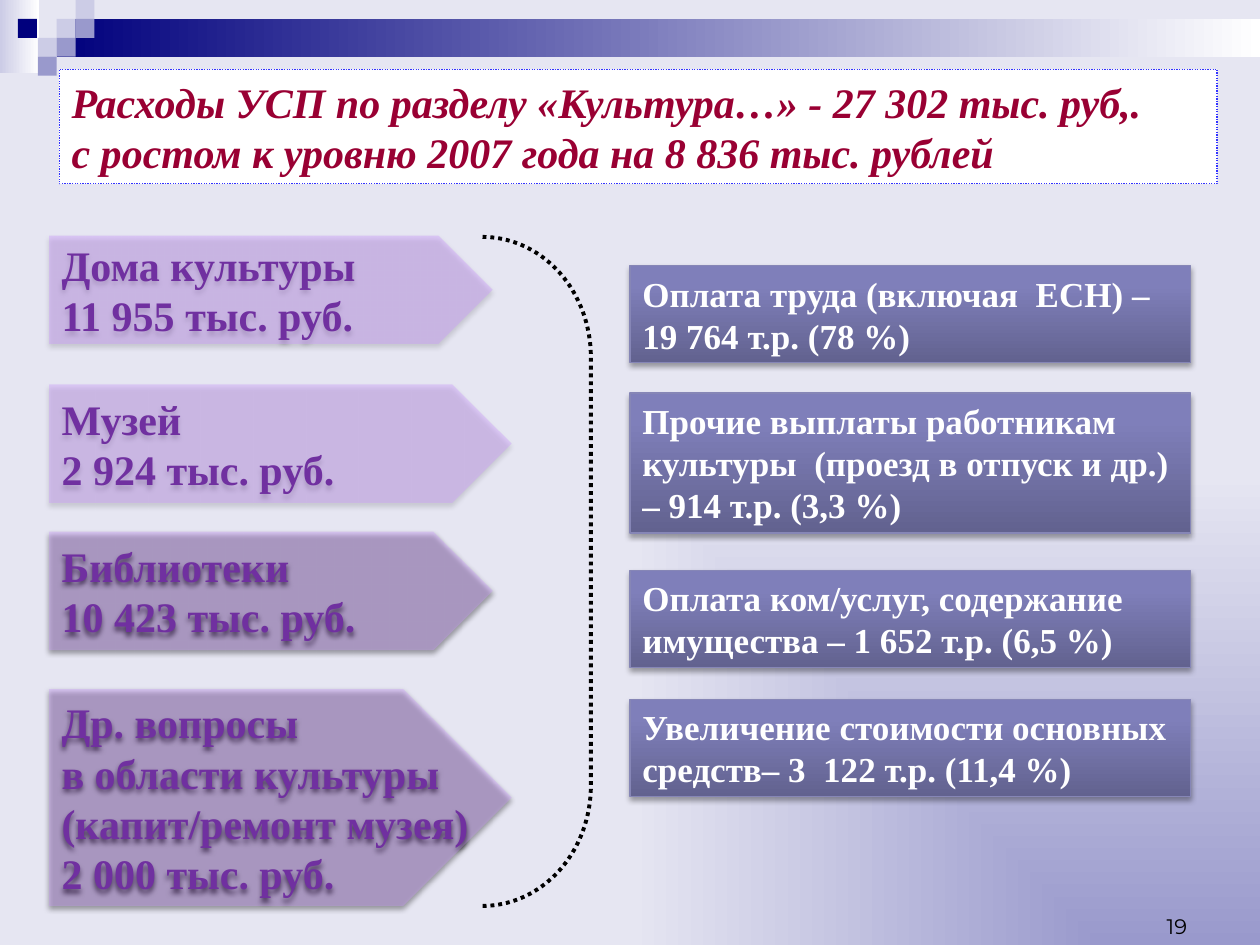
import pptx
import pptx.dml.color
import pptx.enum.dml
import pptx.enum.shapes
import pptx.enum.text
import pptx.oxml.ns
import pptx.util
from lxml import etree

# Content
TITLE = ("Расходы УСП по разделу «Культура…» - 27 302 тыс. руб,. \v"
         "с ростом к уровню 2007 года на 8 836 тыс. рублей")
PAGE_NUMBER = "19"
# Arrows: text, top %, width %, height %, opacity %
INSTITUTIONS = [
    ("Дома культуры\n11 955 тыс. руб.", 24.93, 35.2, 11.47, 39),
    ("Музей\n2 924 тыс. руб.", 40.67, 36.7, 12.53, 37),
    ("Библиотеки\n10 423 тыс. руб.", 56.27, 35.2, 12.53, 35),
    ("Др. вопросы\nв области культуры\n(капит/ремонт музея)\n2 000 тыс. руб.",
     72.93, 36.7, 22.93, 35),
]
# Boxes: text, top %, height %
EXPENSES = [
    ("Оплата труда (включая  ЕСН) – 19 764 т.р. (78 %)", 28.13, 10.27),
    ("Прочие выплаты работникам культуры  (проезд в отпуск и др.) – 914 т.р. (3,3 %)",
     41.6, 14.8),
    ("Оплата ком/услуг, содержание имущества – 1 652 т.р. (6,5 %)", 60.4, 10.27),
    ("Увеличение стоимости основных средств– 3  122 т.р. (11,4 %)", 74, 10.27),
]
# Corner mosaic: column, row, colour name; a tile is 1/50 of the slide height
MOSAIC = [(3, 1, "pale"), (4, 0, "pale"), (4, 1, "mid"), (2, 2, "pale"),
          (0.95, 1, "navy"), (3, 2, "mid"), (2, 3, "mid")]
TILE_WIDTH, TILE_HEIGHT = 1.5, 2

THEME = {
    "serif": "Times New Roman", "sans": "Montserrat",
    "title_size": 24, "arrow_size": 24, "box_size": 20, "number_size": 12,
    "pale": "CCCCE6", "mid": "9999CC", "navy": "00007D", "white": "FFFFFF",
    "black": "000000", "title": "990033", "title_line": "3333FF",
    "arrow": "CC99FF", "arrow_text": "7030A0", "box_line": "8686B6",
    "background": [(0, "9999CC"), (100, "E6E6F2")],
    "corner": [(0, "CCCCE6"), (100, "FFFFFF")],
    "band": [(0, "00007D"), (100, "FFFFFF")],
    "box": [(0, "62628F"), (80, "7F7FBA"), (100, "7E7EBC")],
}
SHAPES = pptx.enum.shapes.MSO_SHAPE
DOTTED = pptx.enum.dml.MSO_LINE.ROUND_DOT
MIDDLE = pptx.enum.text.MSO_ANCHOR.MIDDLE

deck = pptx.Presentation()
deck.slide_width = pptx.util.Inches(10)
deck.slide_height = pptx.util.Inches(7.5)
page = deck.slides.add_slide(deck.slide_layouts[6])


def color(name):
    return pptx.dml.color.RGBColor.from_string(THEME[name])


def place(left, top, width, height):
    """Turn shares of the slide, in percent, into lengths."""
    across, down = deck.slide_width / 100, deck.slide_height / 100
    return [round(n) for n in (left * across, top * down, width * across, height * down)]


def child(parent, tag, **attributes):
    node = etree.SubElement(parent, pptx.oxml.ns.qn("a:" + tag))
    for key, value in attributes.items():
        node.set(key, str(value))
    return node


def paint_gradient(owner, fill, stops, angle=None):
    """Linear gradient at an angle, or one that closes in on the lower right corner."""
    fill.gradient()
    gradient = owner.element.find(".//" + pptx.oxml.ns.qn("a:gradFill"))
    gradient.clear()
    stop_list = child(gradient, "gsLst")
    for position, value in stops:
        child(child(stop_list, "gs", pos=position * 1000), "srgbClr", val=value)
    if angle is None:
        corner = child(gradient, "path", path="rect")
        child(corner, "fillToRect", l=100000, t=100000)
    else:
        child(gradient, "lin", ang=angle * 60000, scaled=0)


def add_shape(kind, area, fill=None, line=None, width=0.75, dash=None):
    shape = page.shapes.add_shape(kind, *place(*area))
    shape.shadow.inherit = False
    if fill:
        shape.fill.solid()
        shape.fill.fore_color.rgb = color(fill)
    else:
        shape.fill.background()
    if line:
        shape.line.color.rgb = color(line)
        shape.line.width = pptx.util.Pt(width)
        if dash:
            shape.line.dash_style = dash
    else:
        shape.line.fill.background()
    return shape


def add_shadow(shape):
    effects = shape.element.spPr.find(pptx.oxml.ns.qn("a:effectLst"))
    shadow = child(effects, "outerShdw", blurRad=pptx.util.Pt(3.1),
                   dist=pptx.util.Pt(1.8), dir=5400000, rotWithShape=0)
    child(child(shadow, "srgbClr", val=THEME["black"]), "alpha", val=35000)


def write(shape, text, size, ink, font="serif", bold=True, italic=False,
          anchor=MIDDLE, align=pptx.enum.text.PP_ALIGN.LEFT, wrap=True):
    frame = shape.text_frame
    frame.text = text
    frame.word_wrap = wrap
    frame.vertical_anchor = anchor
    for para in frame.paragraphs:
        para.alignment = align
        para.font.name = THEME[font]
        para.font.size = pptx.util.Pt(THEME[size])
        para.font.color.rgb = color(ink)
        para.font.bold = bold
        para.font.italic = italic


# Background and corner decoration
paint_gradient(page, page.background.fill, THEME["background"])
for area, stops in [((0, 0, 3.1, 7.73), "corner"), ((4.5, 2, 95.5, 4), "band")]:
    strip = add_shape(SHAPES.RECTANGLE, area)
    paint_gradient(strip, strip.fill, THEME[stops], 0)
for column, row, tone in MOSAIC:
    add_shape(SHAPES.RECTANGLE, (column * TILE_WIDTH, row * TILE_HEIGHT,
                                 TILE_WIDTH, TILE_HEIGHT), tone)

# Title and page number
title = add_shape(SHAPES.RECTANGLE, (4.7, 7.33, 91.9, 12.13), "white", "title_line", dash=DOTTED)
write(title, TITLE, "title_size", "title", italic=True)
number = page.shapes.add_textbox(*place(71.9, 93.33, 23.3, 6.67))
write(number, PAGE_NUMBER, "number_size", "black", "sans", bold=False,
      anchor=pptx.enum.text.MSO_ANCHOR.BOTTOM, align=pptx.enum.text.PP_ALIGN.RIGHT)

# Institutions on the left
for text, top, width, height, opacity in INSTITUTIONS:
    arrow = add_shape(SHAPES.PENTAGON, (3.9, top, width, height), "arrow")
    tint = arrow.element.spPr.find(".//" + pptx.oxml.ns.qn("a:srgbClr"))
    child(tint, "alpha", val=opacity * 1000)
    add_shadow(arrow)
    write(arrow, text, "arrow_size", "arrow_text", wrap=False)

# Bracket that gathers the institutions
bracket = add_shape(SHAPES.RIGHT_BRACKET, (38.3, 25.07, 8.6, 70.8), None, "black", 2.25, DOTTED)
bracket.adjustments[0] = 1.11

# Expenses on the right
for text, top, height in EXPENSES:
    box = add_shape(SHAPES.RECTANGLE, (50, top, 44.5, height), None, "box_line")
    paint_gradient(box, box.fill, THEME["box"], 270)
    add_shadow(box)
    write(box, text, "box_size", "white", anchor=pptx.enum.text.MSO_ANCHOR.TOP)

deck.save("out.pptx")
